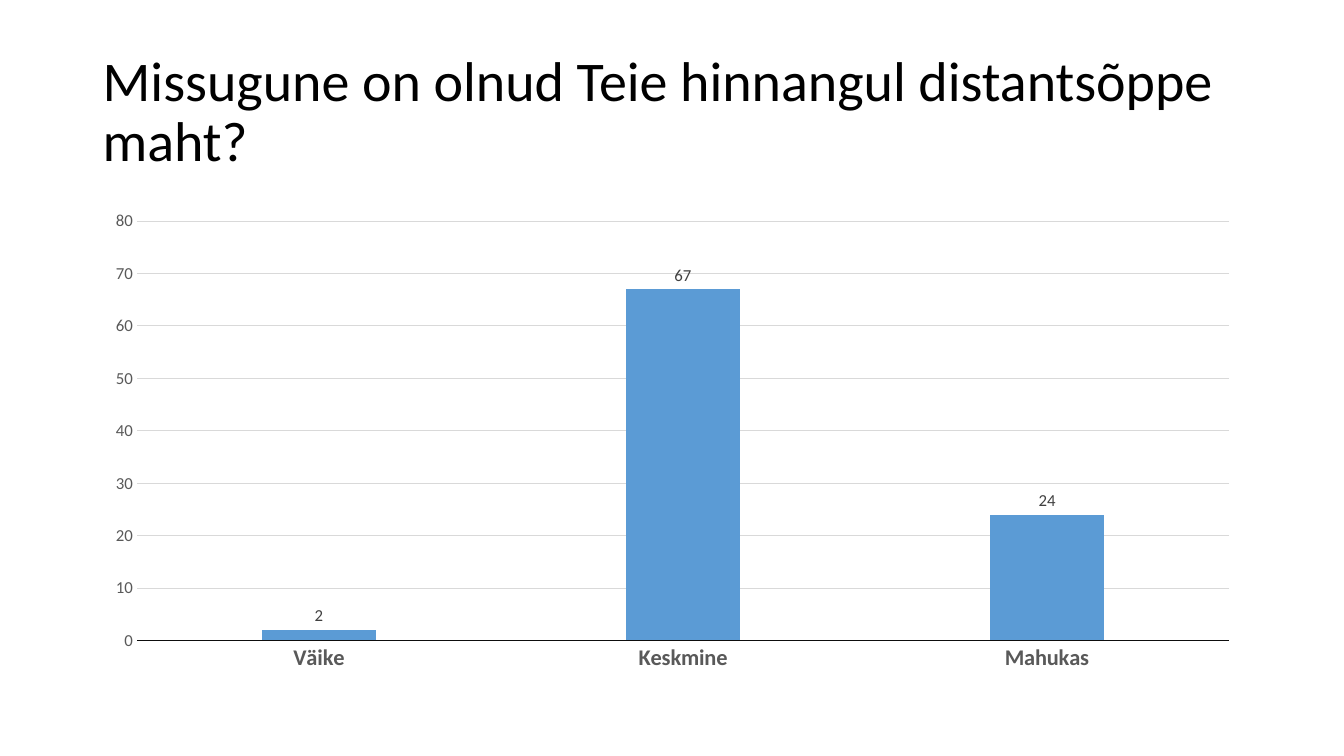
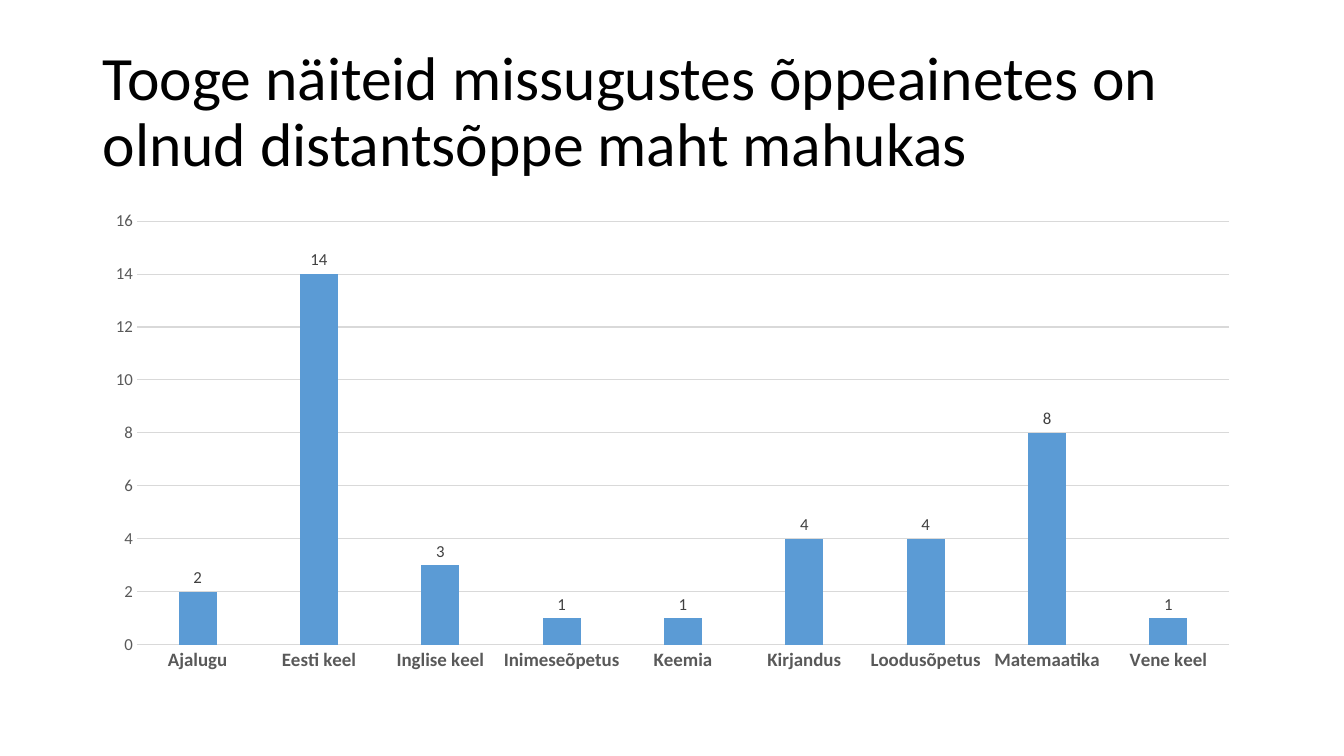
import pptx
import pptx.chart.data
import pptx.dml.color
import pptx.enum.chart
import pptx.enum.text
import pptx.util

Inches = pptx.util.Inches
Pt = pptx.util.Pt


def color(hex_string):
    return pptx.dml.color.RGBColor.from_string(hex_string)


def apply(target, values):
    for name, value in values.items():
        setattr(target, name, value)


class Deck:
    FONT = "Calibri"
    TEXT = "000000"
    AXIS_TEXT = "595959"
    LABEL_TEXT = "404040"
    GRID = "D9D9D9"
    BAR = "5B9BD5"
    LEFT, WIDTH = 0.92, 11.5

    def __init__(self):
        self.presentation = pptx.Presentation()
        apply(self.presentation, {"slide_width": Inches(13.33), "slide_height": Inches(7.5)})
        self.slide = None

    def add_slide(self):
        self.slide = self.presentation.slides.add_slide(self.presentation.slide_layouts[6])

    def style_font(self, font, size, font_color, bold=False):
        apply(font, {"name": self.FONT, "size": Pt(size), "bold": bold})
        font.color.rgb = color(font_color)

    def style_line(self, line, line_color):
        line.width = Pt(0.75)
        line.color.rgb = color(line_color)

    def add_title(self, text, size):
        shape = self.slide.shapes.add_textbox(
            Inches(self.LEFT), Inches(0.4), Inches(self.WIDTH), Inches(1.45))
        apply(shape.text_frame, {
            "word_wrap": True,
            "vertical_anchor": pptx.enum.text.MSO_ANCHOR.MIDDLE,
        })
        paragraph = shape.text_frame.paragraphs[0]
        paragraph.line_spacing = 0.9
        run = paragraph.add_run()
        run.text = text
        self.style_font(run.font, size, self.TEXT)

    def add_column_chart(self, counts, category_size, axis_color, maximum, step):
        data = pptx.chart.data.CategoryChartData()
        data.categories = list(counts)
        data.add_series("Series 1", list(counts.values()))
        chart = self.slide.shapes.add_chart(
            pptx.enum.chart.XL_CHART_TYPE.COLUMN_CLUSTERED,
            Inches(self.LEFT), Inches(2), Inches(self.WIDTH), Inches(4.76), data).chart
        apply(chart, {"has_title": False, "has_legend": False})
        self.style_font(chart.font, 10, self.TEXT)
        self.style_category_axis(chart.category_axis, category_size, axis_color)
        self.style_value_axis(chart.value_axis, maximum, step)
        self.style_columns(chart.plots[0])

    def style_category_axis(self, axis, size, axis_color):
        axis.major_tick_mark = pptx.enum.chart.XL_TICK_MARK.NONE
        self.style_font(axis.tick_labels.font, size, self.AXIS_TEXT, True)
        self.style_line(axis.format.line, axis_color)

    def style_value_axis(self, axis, maximum, step):
        apply(axis, {
            "major_tick_mark": pptx.enum.chart.XL_TICK_MARK.NONE,
            "minimum_scale": 0,
            "maximum_scale": maximum,
            "major_unit": step,
            "has_major_gridlines": True,
        })
        self.style_font(axis.tick_labels.font, 12, self.AXIS_TEXT)
        self.style_line(axis.major_gridlines.format.line, self.GRID)
        axis.format.line.fill.background()

    def style_columns(self, plot):
        apply(plot, {
            "gap_width": 219,
            "overlap": -27,
            "vary_by_categories": False,
            "has_data_labels": True,
        })
        apply(plot.data_labels, {
            "show_value": True,
            "position": pptx.enum.chart.XL_LABEL_POSITION.OUTSIDE_END,
        })
        self.style_font(plot.data_labels.font, 12, self.LABEL_TEXT)
        fill = plot.series[0].format.fill
        fill.solid()
        fill.fore_color.rgb = color(self.BAR)


def main():
    deck = Deck()

    deck.add_slide()
    deck.add_title("Missugune on olnud Teie hinnangul distantsõppe maht?", 40)
    workload = {"Väike": 2, "Keskmine": 67, "Mahukas": 24}
    deck.add_column_chart(workload, 16, "0D0D0D", 80, 10)

    deck.add_slide()
    deck.add_title("Tooge näiteid missugustes õppeainetes on olnud distantsõppe maht mahukas", 44)
    subjects = {
        "Ajalugu": 2,
        "Eesti keel": 14,
        "Inglise keel": 3,
        "Inimeseõpetus": 1,
        "Keemia": 1,
        "Kirjandus": 4,
        "Loodusõpetus": 4,
        "Matemaatika": 8,
        "Vene keel": 1,
    }
    deck.add_column_chart(subjects, 13.5, Deck.GRID, 16, 2)

    deck.presentation.save("out.pptx")


if __name__ == "__main__":
    main()
